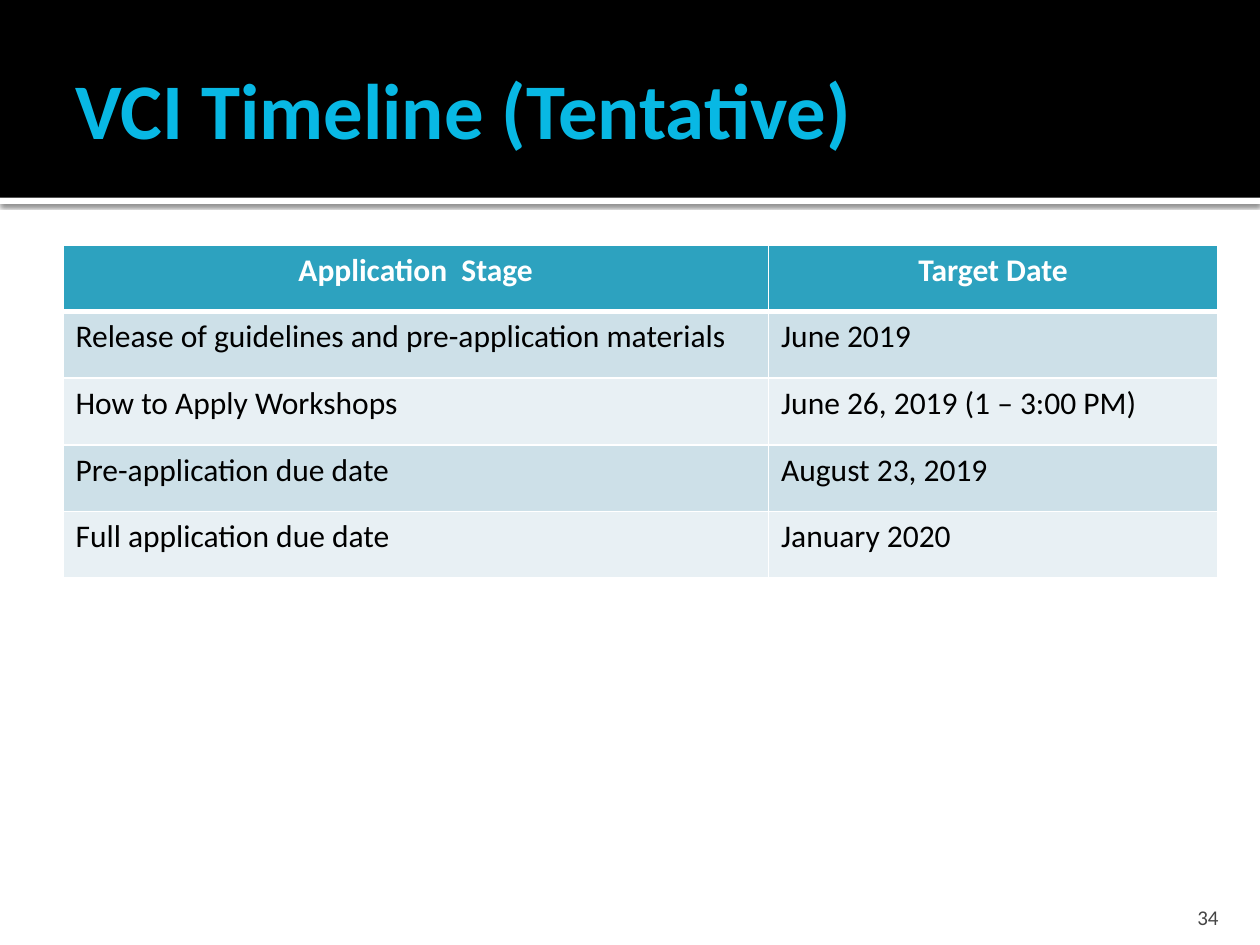
from dataclasses import dataclass

import pptx
import pptx.dml.color
import pptx.enum.shapes
import pptx.enum.text
import pptx.oxml
import pptx.oxml.ns
import pptx.util

Pt = pptx.util.Pt
ALIGN = pptx.enum.text.PP_ALIGN
ANCHOR = pptx.enum.text.MSO_ANCHOR
NS = pptx.oxml.ns.nsdecls("a")


@dataclass(frozen=True)
class Theme:
    font: str = "Calibri"
    black: str = "000000"
    white: str = "FFFFFF"
    title: str = "08B8E4"
    header: str = "2DA2BF"
    bands: tuple = ("CDE0E8", "E8F0F4")
    number: str = "454545"
    title_size: int = 45
    table_size: int = 18
    number_size: int = 12


THEME = Theme()

ROWS = [
    ("Application  Stage", "Target Date"),
    ("Release of guidelines and pre-application materials", "June 2019"),
    ("How to Apply Workshops", "June 26, 2019 (1 – 3:00 PM)"),
    ("Pre-application due date", "August 23, 2019"),
    ("Full application due date", "January 2020"),
]


def rgb(color):
    return pptx.dml.color.RGBColor.from_string(color)


def set_text(tf, text, size, color, bold=False, align=ALIGN.LEFT):
    p = tf.paragraphs[0]
    p.alignment = align
    r = p.add_run()
    r.text = text
    r.font.name = THEME.font
    r.font.size = Pt(size)
    r.font.bold = bold
    r.font.color.rgb = rgb(color)


def set_frame(tf, anchor, left, top, right, bottom):
    tf.word_wrap = True
    tf.auto_size = pptx.enum.text.MSO_AUTO_SIZE.NONE
    tf.vertical_anchor = anchor
    tf.margin_left, tf.margin_top = Pt(left), Pt(top)
    tf.margin_right, tf.margin_bottom = Pt(right), Pt(bottom)


def add_band(s, top, height, color):
    sp = s.shapes.add_shape(pptx.enum.shapes.MSO_SHAPE.RECTANGLE,
                            0, Pt(top), Pt(720), Pt(height))
    sp.shadow.inherit = False
    sp.fill.solid()
    sp.fill.fore_color.rgb = rgb(color)
    sp.line.fill.background()
    return sp


def add_shadow(sp):
    effects = sp.element.spPr.find(pptx.oxml.ns.qn("a:effectLst"))
    effects.append(pptx.oxml.parse_xml(
        f'<a:outerShdw {NS} blurRad="{Pt(2.5)}" dist="{Pt(0.8)}" dir="5400000" '
        f'algn="t" rotWithShape="0"><a:srgbClr val="{THEME.black}">'
        '<a:alpha val="60000"/></a:srgbClr></a:outerShdw>'))


def add_title(s, text):
    sp = s.shapes.title
    sp.left, sp.top, sp.width, sp.height = Pt(36), Pt(12.24), Pt(648), Pt(98.64)
    set_frame(sp.text_frame, ANCHOR.MIDDLE, 7.2, 3.6, 3.6, 3.6)
    set_text(sp.text_frame, text, THEME.title_size, THEME.title, bold=True)
    s.shapes.element.append(sp.element)  # in front of the bands


def set_borders(cell, top, bottom):
    tc_pr = cell._tc.get_or_add_tcPr()
    widths = {"lnL": 1, "lnR": 1, "lnT": top, "lnB": bottom}
    for i, (tag, width) in enumerate(widths.items()):
        tc_pr.insert(i, pptx.oxml.parse_xml(
            f'<a:{tag} {NS} w="{Pt(width)}"><a:solidFill>'
            f'<a:srgbClr val="{THEME.white}"/></a:solidFill></a:{tag}>'))


def add_timeline(s, rows, widths, row_height):
    table = s.shapes.add_table(len(rows), len(widths), Pt(36), Pt(139.9),
                               Pt(sum(widths)), Pt(row_height * len(rows))).table
    for col, width in zip(table.columns, widths):
        col.width = Pt(width)
    for i, row in enumerate(rows):
        table.rows[i].height = Pt(row_height)
        header = i == 0
        for j, text in enumerate(row):
            cell = table.cell(i, j)
            cell.fill.solid()
            cell.fill.fore_color.rgb = rgb(
                THEME.header if header else THEME.bands[(i - 1) % 2])
            set_borders(cell, top=3 if i == 1 else 1, bottom=3 if header else 1)
            set_text(cell.text_frame, text, THEME.table_size,
                     THEME.white if header else THEME.black, bold=header,
                     align=ALIGN.CENTER if header else ALIGN.LEFT)


def add_page_number(s, text):
    sp = s.shapes.add_textbox(Pt(645.84), Pt(509.76), Pt(57.6), Pt(21.6))
    set_frame(sp.text_frame, ANCHOR.BOTTOM, 7.2, 3.6, 7.2, 0)
    set_text(sp.text_frame, text, THEME.number_size, THEME.number,
             align=ALIGN.RIGHT)


def main():
    prs = pptx.Presentation()
    prs.slide_width, prs.slide_height = Pt(720), Pt(540)
    s = prs.slides.add_slide(prs.slide_layouts[5])

    # Header: white strip with a shadow under a black band
    add_shadow(add_band(s, 113, 3.6, THEME.white))
    add_band(s, 0, 113, THEME.black)
    add_title(s, "VCI Timeline (Tentative)")

    # Timeline table
    add_timeline(s, ROWS, widths=(403.2, 256.5), row_height=38.1)

    # Footer
    add_page_number(s, "34")
    prs.save("out.pptx")


if __name__ == "__main__":
    main()
